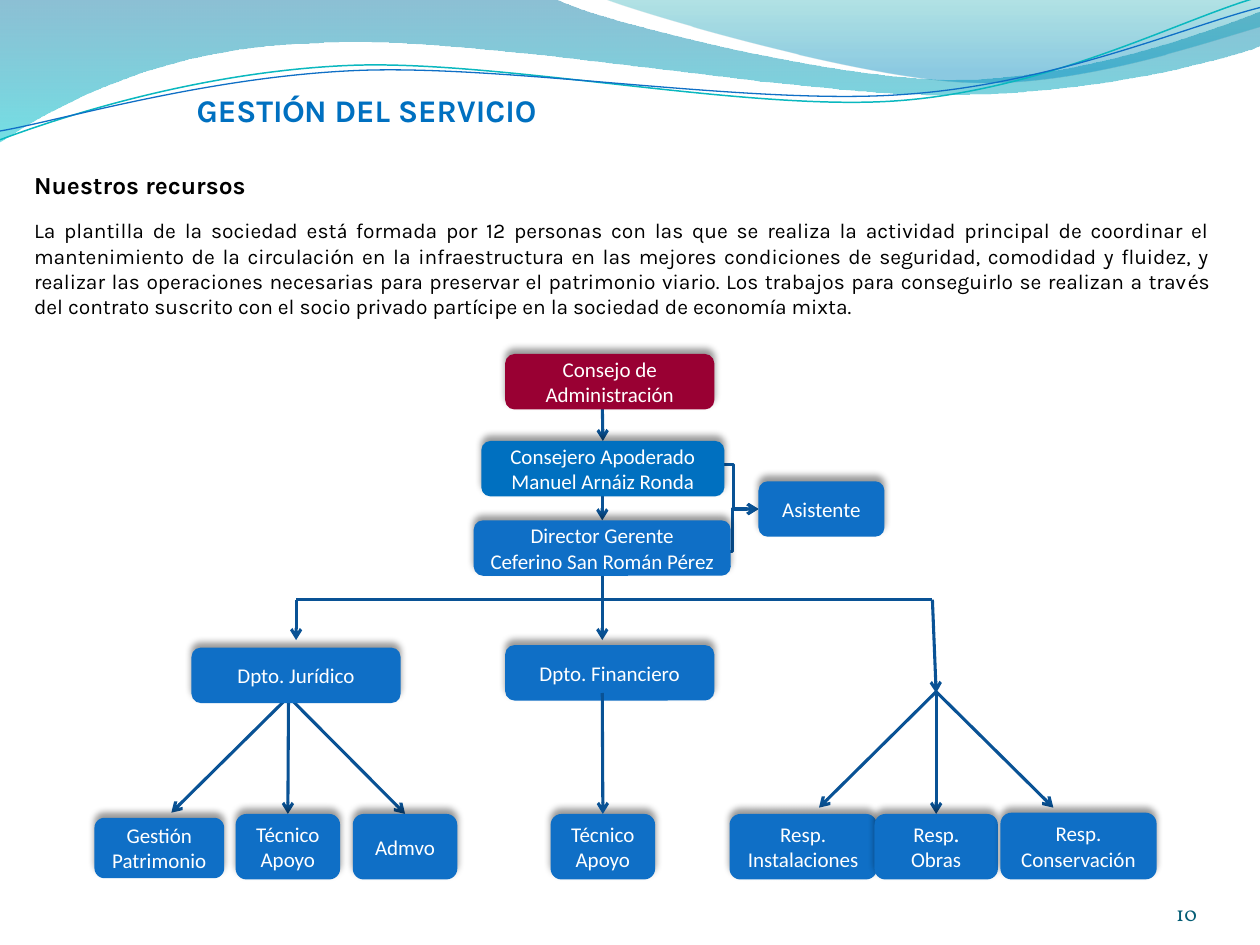
"""Build the organisation chart slide with python-pptx."""
from lxml import etree
from pptx import Presentation
from pptx import util as u
from pptx.dml.color import RGBColor
from pptx.enum import shapes, text
from pptx.oxml.ns import qn


def rgb(value):
    return RGBColor.from_string(value)


def inches(*values):
    return [u.Inches(v) for v in values]


def sub(parent, tag, **attrs):
    return etree.SubElement(parent, qn(tag), {k: str(v) for k, v in attrs.items()})


def write(tf, content, size=12, color="FFFFFF", bold=False, font="Calibri",
          alt="Calibri", align=text.PP_ALIGN.CENTER, after=0):
    for line in content.split("\n"):
        p = tf.add_paragraph() if tf.text else tf.paragraphs[0]
        p.alignment = align
        p.space_before, p.space_after = u.Pt(0), u.Pt(after)
        for i, piece in enumerate(line.split("|")):
            r = p.add_run()
            r.text = piece
            r.font.name = alt if i % 2 else font
            r.font.size, r.font.bold = u.Pt(size), bold
            r.font.color.rgb = rgb(color)


class Deck:
    ink = "095295"
    blue = "0F6FC6"

    def __init__(self):
        self.prs = Presentation()
        self.prs.slide_width, self.prs.slide_height = inches(10, 7.5)
        self.s = self.prs.slides.add_slide(self.prs.slide_layouts[1])

    def outline(self, start, segments, closed):
        fb = self.s.shapes.build_freeform(*inches(*start))
        points = [seg[i:i + 2] for seg in segments for i in range(0, len(seg), 2)]
        fb.add_line_segments([inches(*pt) for pt in points], close=closed)
        sp = fb.convert_to_shape()
        sp.shadow.inherit = False
        steps = iter(list(sp._element.iter(qn("a:lnTo"))))
        for seg in segments:
            group = [next(steps) for _ in range(len(seg) // 2)]
            if len(group) == 3:
                group[0].addprevious(etree.Element(qn("a:cubicBezTo")))
                bezier = group[0].getprevious()
                for step in group:
                    bezier.append(step[0])
                    step.getparent().remove(step)
        return sp

    def wave(self, start, segments, stops):
        sp = self.outline(start, segments, True)
        sp.line.fill.background()
        sp.fill.gradient()
        sp.fill.gradient_angle = 270
        for stop, (pos, color, _) in zip(sp.fill.gradient_stops, stops):
            stop.position, stop.color.rgb = pos, rgb(color)
        for clr, stop in zip(sp._element.spPr.iter(qn("a:srgbClr")), stops):
            sub(clr, "a:alpha", val=stop[2] * 1000)

    def curve(self, start, segments, color, width):
        sp = self.outline(start, segments, False)
        sp.fill.background()
        sp.line.color.rgb, sp.line.width = rgb(color), u.Pt(width)

    def placeholder(self, index, x, y, w, h, anchor, wrap=True):
        sp = self.s.placeholders[index]
        sp.left, sp.top, sp.width, sp.height = inches(x, y, w, h)
        tf = sp.text_frame
        tf.auto_size = text.MSO_AUTO_SIZE.NONE
        tf.vertical_anchor, tf.word_wrap = anchor, wrap
        return tf

    def label(self, content, x, y, w, h, **fmt):
        tf = self.s.shapes.add_textbox(*inches(x, y, w, h)).text_frame
        tf.margin_left = tf.margin_right = tf.margin_top = tf.margin_bottom = 0
        tf.word_wrap, tf.vertical_anchor = True, text.MSO_ANCHOR.BOTTOM
        write(tf, content, **fmt)

    def box(self, content, x, y, w, h=0.44, fill=blue, **fmt):
        sp = self.s.shapes.add_shape(shapes.MSO_SHAPE.ROUNDED_RECTANGLE,
                                     *inches(x, y, w, h))
        sp.fill.solid()
        sp.fill.fore_color.rgb = rgb(fill)
        sp.line.fill.background()
        sp.shadow.inherit = False
        shadow = sub(sp._element.spPr.find(qn("a:effectLst")), "a:outerShdw",
                     blurRad=u.Pt(4), dist=u.Pt(3), dir=270 * 60000, rotWithShape=0)
        sub(sub(shadow, "a:srgbClr", val="000000"), "a:alpha", val=40000)
        sp.text_frame.word_wrap = True
        sp.text_frame.vertical_anchor = text.MSO_ANCHOR.MIDDLE
        write(sp.text_frame, content, **fmt)
        return sp

    def link(self, x1, y1, x2, y2, begin=None, end=None, arrow=True,
             elbow=None, behind=True):
        kind = shapes.MSO_CONNECTOR.ELBOW if elbow else shapes.MSO_CONNECTOR.STRAIGHT
        c = self.s.shapes.add_connector(kind, *inches(x1, y1, x2, y2))
        if begin:
            c.begin_connect(*begin)
        if end:
            c.end_connect(*end)
        c.line.color.rgb, c.line.width = rgb(self.ink), u.Pt(1.75)
        if elbow:
            av = c._element.spPr.find(qn("a:prstGeom")).get_or_add_avLst()
            sub(av, "a:gd", name="adj1", fmla=f"val {round(elbow * 100000)}")
        if arrow:
            sub(c.line._get_or_add_ln(), "a:tailEnd", type="arrow")
        sub(c._element.spPr, "a:effectLst")
        if behind:
            self.s.shapes._spTree.insert(2, c._element)


def main():
    d = Deck()
    d.wave((0, 0), [
        (4.4, -0.01), (4.76, 0.17, 6.64, 0.63, 7.58, 0.63),
        (8.53, 0.63, 9.58, 0.26, 10, 0.09), (10.01, 0.36),
        (9.83, 0.44, 8.7, 0.76, 7.46, 0.75), (6.22, 0.75, 3.82, 0.28, 2.57, 0.34),
        (1.29, 0.36, 0.46, 0.83, -0.01, 1.13), (0, 0)],
        [(0, "0074A1", 45), (1, "00C6CF", 55)])
    d.wave((4.79, -0.01), [
        (5.09, 0.11, 6.82, 0.62, 7.69, 0.65), (8.56, 0.69, 9.61, 0.32, 10, 0.21),
        (10, 0), (4.79, -0.01)], [(0, "00A1A9", 30), (0.8, "008BBF", 45)])
    d.curve((0, 1.11), [
        (0.48, 0.93, 1.58, 0.57, 2.77, 0.52), (3.95, 0.47, 5.93, 0.89, 7.13, 0.8),
        (8.33, 0.71, 9.38, 0.15, 9.98, -0.02)], "0AB8BF", 0.85)
    d.curve((0, 1.04), [
        (0.47, 0.96, 1.64, 0.61, 2.83, 0.56), (4.03, 0.51, 5.97, 0.84, 7.17, 0.75),
        (8.36, 0.67, 9.41, 0.21, 10, 0.06)], d.blue, 0.75)

    karla = dict(font="Karla", align=text.PP_ALIGN.JUSTIFY)
    title = d.placeholder(0, 1.46, 0.67, 3.26, 0.4, text.MSO_ANCHOR.TOP, wrap=False)
    write(title, "GESTI|Ó|N DEL SERVICIO", size=18, color="0070C0", bold=True, **karla)
    body = d.placeholder(1, 0.17, 1.29, 9.53, 1.3, text.MSO_ANCHOR.MIDDLE)
    write(body, "Nuestros recursos", size=14, color="000000", bold=True, after=10.5, **karla)
    write(body, "La plantilla de la sociedad est|á| formada por 12 personas con las que se "
          "realiza la actividad principal de coordinar el mantenimiento de la circulaci|ó|n "
          "en la infraestructura en las mejores condiciones de seguridad, comodidad y "
          "fluidez, y realizar las operaciones necesarias para preservar el patrimonio "
          "viario. Los trabajos para conseguirlo se realizan a trav|é|s del contrato "
          "suscrito con el socio privado part|í|cipe en la sociedad de econom|í|a mixta.",
          color="000000", **karla)
    for p in body.paragraphs:
        pPr = p._p.get_or_add_pPr()
        pPr.set("marL", "0")
        pPr.set("indent", "0")
        sub(pPr, "a:buNone")

    d.box("Consejo de Administración", 4.01, 2.81, 1.66, fill="990033")
    adviser = d.box("Consejero Apoderado\nManuel Arnáiz Ronda", 3.82, 3.5, 1.93, fill="0070C0")
    director = d.box("Director Gerente\nCeferino San Román Pérez", 3.76, 4.13, 2.04)
    assistant = d.box("Asistente", 6.02, 3.82, 1)
    d.box("Dpto. Jurídico", 1.52, 5.14, 1.66)
    d.box("Dpto. Financiero", 4.01, 5.12, 1.66)
    d.box("Gestión\nPatrimonio", 0.75, 6.49, 1.03, 0.48)
    legal, clerk, finance = [
        d.box(name, x, 6.46, 0.83, 0.52)
        for name, x in [("Técnico Apoyo", 1.87), ("Admvo", 2.8), ("Técnico Apoyo", 4.37)]]
    d.box("Resp. Instalaciones", 5.79, 6.46, 1.17, 0.52)
    works = d.box("Resp|. |Obras", 6.94, 6.46, 0.98, 0.52, alt="Vollkorn")
    d.box("Resp. Conservación", 7.94, 6.45, 1.24, 0.53)

    d.link(4.78, 3.19, 4.78, 3.5, end=(adviser, 0))
    d.link(4.78, 3.82, 4.78, 4.13, end=(director, 0))
    d.link(4.78, 4.51, 4.78, 5.08)
    d.link(5.62, 3.69, 6.02, 4.04, end=(assistant, 1), elbow=0.5)
    d.link(5.58, 4.38, 6.02, 4.04, end=(assistant, 1), elbow=0.54)
    for x, y, bottom, middle, right in [(2.29, 5.53, 6.45, legal, clerk),
                                        (7.43, 5.49, 6.41, works, None)]:
        d.link(x, y, x - 0.93, bottom)
        d.link(x, y, x, 6.46, end=(middle, 0))
        d.link(x, y, x + 0.93, bottom, end=right and (right, 0))
    d.link(4.78, 5.5, 4.78, 6.46, end=(finance, 0), behind=False)
    d.link(2.35, 4.76, 7.4, 4.76, arrow=False, behind=False)
    d.link(7.4, 4.76, 7.43, 5.5, behind=False)
    d.link(2.35, 4.76, 2.35, 5.08, behind=False)

    d.label("10", 8.67, 6.95, 0.83, 0.4, color="045D75", font="Vollkorn",
            align=text.PP_ALIGN.RIGHT)
    d.prs.save("out.pptx")


if __name__ == "__main__":
    main()
